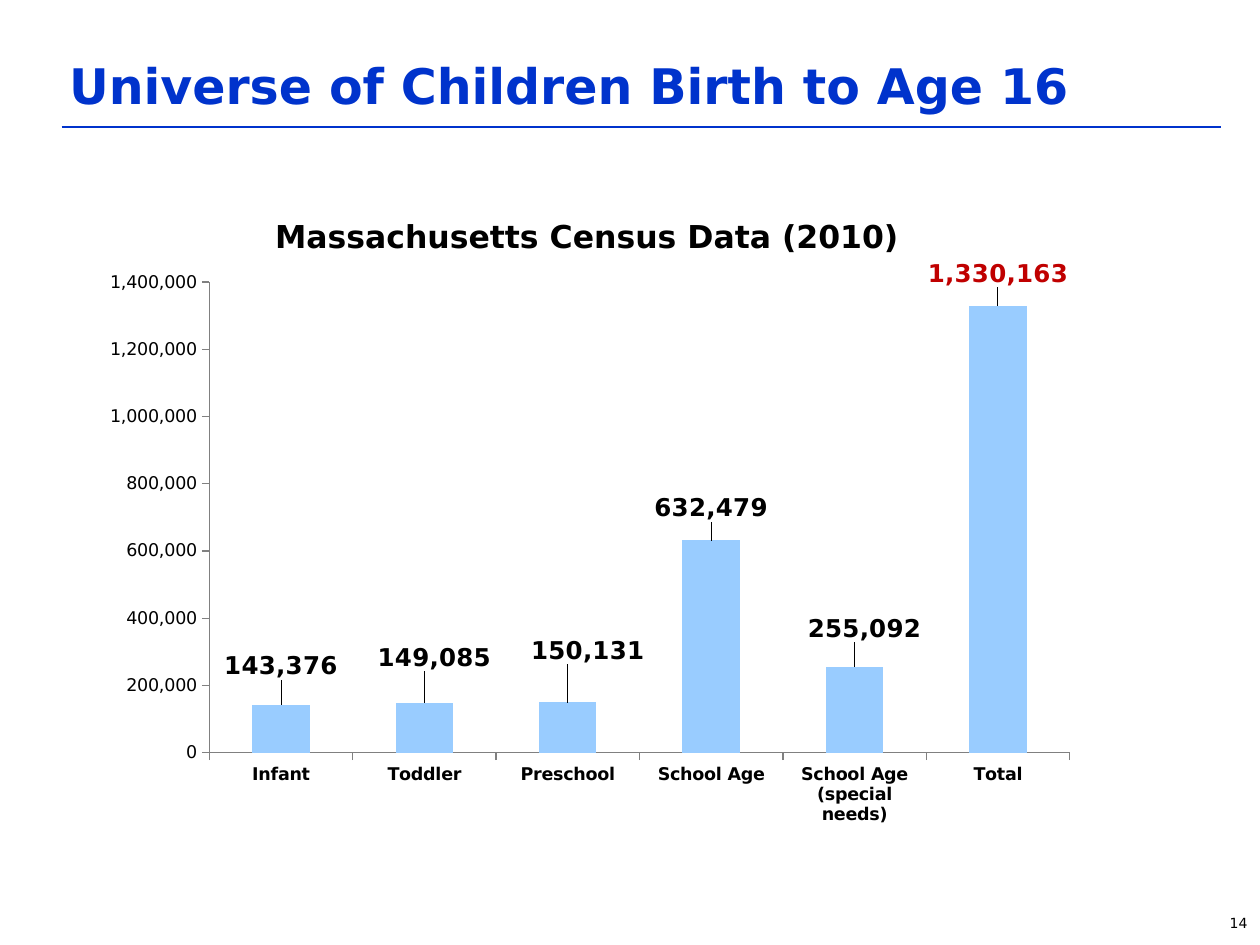
from lxml.etree import SubElement as Sub
from pptx import Presentation
from pptx.chart.data import CategoryChartData as Data
from pptx.dml.color import RGBColor as Rgb
from pptx.enum.chart import XL_CHART_TYPE as Kind, XL_LABEL_POSITION as Spot, XL_TICK_MARK as Tick
from pptx.enum.shapes import MSO_CONNECTOR as Join
from pptx.enum.text import MSO_ANCHOR as Anchor, PP_ALIGN as Align
from pptx.oxml import parse_xml
from pptx.oxml.ns import nsdecls, qn
from pptx.util import Cm, Pt

HEAD = "Universe of Children Birth to Age 16"
NAME = "Massachusetts Census Data (2010)"
PAGE = "14"
FACE = "DejaVu Sans"
HUES = {"blue": "0033CC", "bar": "99CCFF", "ink": "000000",
        "red": "C00000", "axis": "808080", "grid": "FFFFFF"}
BARS = [
    ("Infant", 143376, "ink", 0, -0.03),
    ("Toddler", 149085, "ink", 0.01, -0.04),
    ("Preschool", 150131, "ink", 0.02, -0.05),
    ("School Age", 632479, "ink", 0, -0.02),
    ("School Age (special needs)", 255092, "ink", 0.01, -0.03),
    ("Total", 1330163, "red", 0, -0.02),
]


def style(font, size, hue="ink", bold=False):
    """Set the face, size, colour and weight of a font."""
    font.name, font.size, font.bold = FACE, Pt(size), bold
    font.color.rgb = Rgb.from_string(HUES[hue])


def put(frame, text, size, hue="ink", bold=False, align=Align.LEFT):
    """Write one formatted line of text into a frame."""
    para = frame.paragraphs[0]
    para.alignment = align
    run = para.add_run()
    run.text = text
    style(run.font, size, hue, bold)


def stroke(line, hue):
    """Give a line its colour and the common width."""
    line.color.rgb = Rgb.from_string(HUES[hue])
    line.width = Pt(0.75)


def place(node, spot, **parts):
    """Give a chart element a manual layout."""
    for old in node.findall(qn("c:layout")):
        node.remove(old)
    lay = parse_xml(f"<c:layout {nsdecls('c')}><c:manualLayout/></c:layout>")
    for key, val in parts.items():
        Sub(lay[0], qn(f"c:{key}")).set("val", str(val))
    node.insert(spot, lay)


def draw(slide):
    """Add the census column chart."""
    data = Data(number_format="#,##0")
    data.categories = [bar[0] for bar in BARS]
    data.add_series(NAME, [bar[1] for bar in BARS])
    chart = slide.shapes.add_chart(Kind.COLUMN_CLUSTERED, Cm(1.8), Cm(3.71),
                                   Cm(20.17), Cm(13.18), data).chart
    style(chart.font, 10)
    chart.has_legend = False
    chart.has_title = True
    title = chart.chart_title
    put(title.text_frame, NAME, 18, bold=True, align=Align.CENTER)
    place(title._element, 1, xMode="edge", yMode="edge", x=0.18, y=0.04)

    plot = chart.plots[0]
    plot.gap_width = 150
    plot.vary_by_categories = False
    place(plot._element.getparent(), 0, layoutTarget="inner", xMode="edge",
          yMode="edge", x=0.12, y=0.15, w=0.86, h=0.72)

    for axis, bold in ((chart.category_axis, True), (chart.value_axis, False)):
        axis.major_tick_mark, axis.minor_tick_mark = Tick.OUTSIDE, Tick.NONE
        stroke(axis.format.line, "axis")
        style(axis.tick_labels.font, 10, bold=bold)
    axis = chart.value_axis
    axis.minimum_scale, axis.maximum_scale, axis.major_unit = 0, 1400000, 200000
    axis.tick_labels.number_format = "#,##0"
    axis.tick_labels.number_format_is_linked = False
    stroke(axis.major_gridlines.format.line, "grid")

    plot.has_data_labels = True
    tags = plot.data_labels
    tags.show_value = True
    tags.number_format, tags.number_format_is_linked = "#,##0", False
    style(tags.font, 14, bold=True)
    row = plot.series[0]
    row.format.fill.solid()
    row.format.fill.fore_color.rgb = Rgb.from_string(HUES["bar"])
    for num, (_, _, hue, _, _) in enumerate(BARS):
        tag = row.points[num].data_label
        style(tag.font, 14, hue, True)
        tag.position = Spot.OUTSIDE_END
    for node, bar in zip(row._element.xpath("c:dLbls/c:dLbl"), BARS):
        place(node, 1, x=bar[3], y=bar[4])


def main():
    """Build and save the slide."""
    deck = Presentation()
    deck.slide_width, deck.slide_height = Cm(25.4), Cm(19.05)
    slide = deck.slides.add_slide(deck.slide_layouts[5])
    rule = slide.shapes.add_connector(Join.STRAIGHT, Cm(1.24), Cm(2.56),
                                      Cm(24.61), Cm(2.56))
    stroke(rule.line, "blue")
    Sub(rule._element.spPr, qn("a:effectLst"))
    head = slide.shapes.title
    head.left, head.top, head.width, head.height = Cm(1.14), Cm(0.43), Cm(21.06), Cm(2.01)
    head.text_frame.vertical_anchor = Anchor.BOTTOM
    put(head.text_frame, HEAD, 28, "blue", True)
    page = slide.shapes.add_textbox(Cm(20.04), Cm(18.31), Cm(5.36), Cm(0.74))
    page.text_frame.word_wrap = True
    put(page.text_frame, PAGE, 8, align=Align.RIGHT)
    draw(slide)
    deck.save("out.pptx")


if __name__ == "__main__":
    main()
